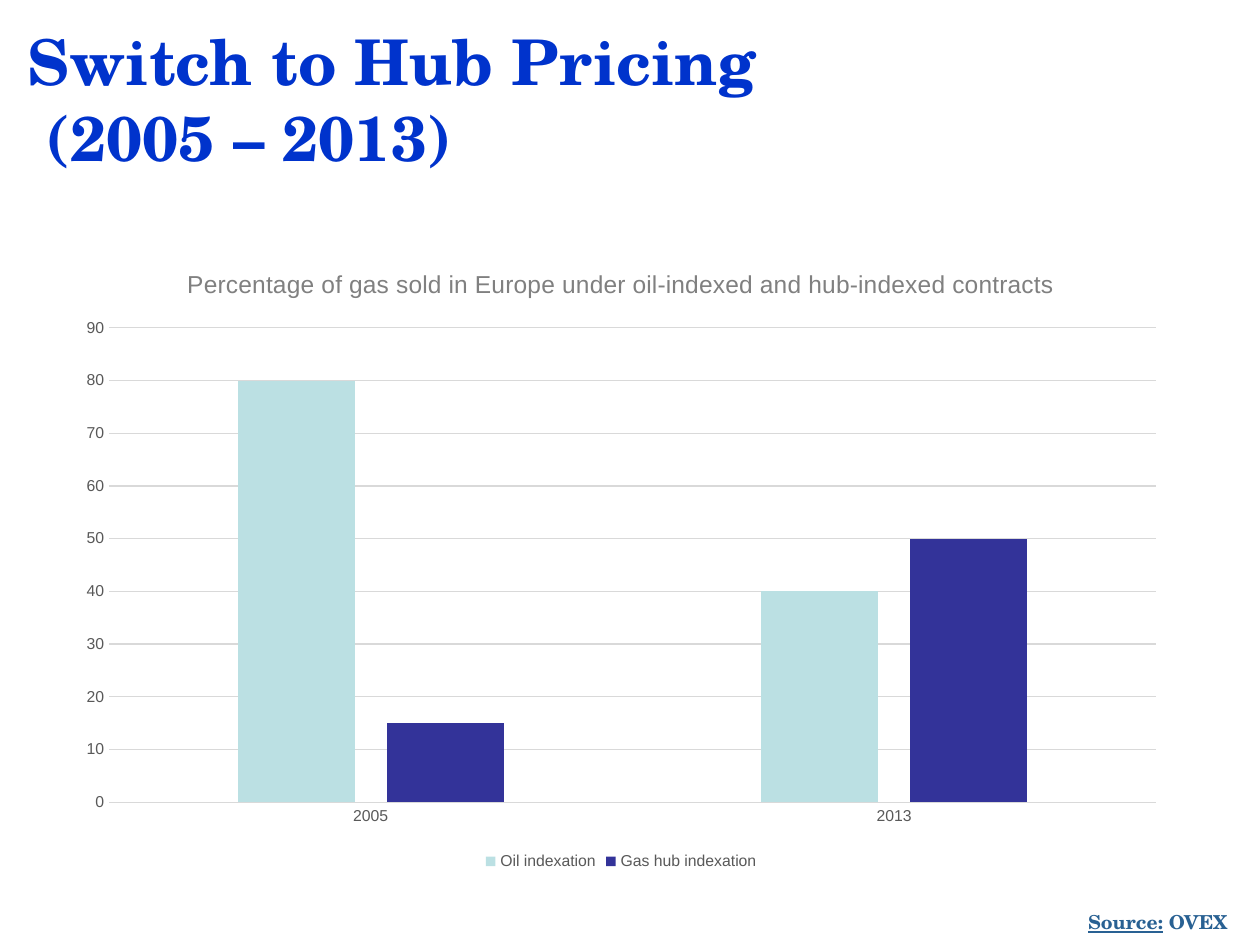
"""Build a slide comparing oil-indexed and hub-indexed gas sales in Europe."""
import pptx
import pptx.chart.data
import pptx.dml.color
import pptx.enum.chart
import pptx.enum.text
import pptx.util
from pptx.util import Inches, Pt

TITLE = ["Switch to Hub Pricing", " (2005 – 2013)"]
SOURCE = [("Source:", True), (" OVEX", False)]
CHART_TITLE = "Percentage of gas sold in Europe under oil-indexed and hub-indexed contracts"
YEARS = ["2005", "2013"]
SERIES = [("Oil indexation", (80, 40), "BBE0E3"), ("Gas hub indexation", (15, 50), "333399")]
SERIF, SANS = "TeX Gyre Schola", "Arial"
GREY, GRID = "595959", "D9D9D9"


def rgb(value):
    return pptx.dml.color.RGBColor.from_string(value)


def style(font, size, color, name=SANS, bold=False, underline=None):
    font.size, font.name, font.bold, font.underline = Pt(size), name, bold, underline
    font.color.rgb = rgb(color)


def add_run(p, text, **fmt):
    r = p.add_run()
    r.text = text
    style(r.font, **fmt)


def place(sp, left, top, width, height):
    sp.left, sp.top, sp.width, sp.height = map(Inches, (left, top, width, height))


def draw_line(line):
    line.color.rgb = rgb(GRID)
    line.width = Pt(0.75)


def add_title(s):
    sp = s.shapes.title
    place(sp, 0.12, 0.13, 8.19, 1.18)
    tf = sp.text_frame
    tf.word_wrap = True
    tf.auto_size = pptx.enum.text.MSO_AUTO_SIZE.NONE
    tf.vertical_anchor = pptx.enum.text.MSO_ANCHOR.TOP
    for i, text in enumerate(TITLE):
        p = tf.add_paragraph() if i else tf.paragraphs[0]
        p.alignment = pptx.enum.text.PP_ALIGN.LEFT
        p.space_before = Pt(0)
        add_run(p, text, size=36, color="0033CC", name=SERIF, bold=True)


def add_source(s):
    sp = s.shapes.add_textbox(Inches(6.89), Inches(7.22), Inches(2.95), Inches(0.2))
    tf = sp.text_frame
    tf.word_wrap = True
    tf.vertical_anchor = pptx.enum.text.MSO_ANCHOR.MIDDLE
    p = tf.paragraphs[0]
    p.alignment = pptx.enum.text.PP_ALIGN.RIGHT
    for text, underline in SOURCE:
        add_run(p, text, size=11, color="296193", name=SERIF, bold=True, underline=underline)


def add_chart(s):
    data = pptx.chart.data.CategoryChartData()
    data.categories = YEARS
    for name, values, _ in SERIES:
        data.add_series(name, values)
    chart = s.shapes.add_chart(
        pptx.enum.chart.XL_CHART_TYPE.COLUMN_CLUSTERED,
        Inches(0.51), Inches(1.94), Inches(8.84), Inches(5.01), data).chart
    style(chart.font, 10, "000000")
    chart.has_title = True
    add_run(chart.chart_title.text_frame.paragraphs[0], CHART_TITLE, size=14, color="808080")
    chart.chart_title.include_in_layout = False

    chart.has_legend = True
    chart.legend.position = pptx.enum.chart.XL_LEGEND_POSITION.BOTTOM
    chart.legend.include_in_layout = False
    style(chart.legend.font, 9, GREY)

    cat, val = chart.category_axis, chart.value_axis
    for axis in (cat, val):
        style(axis.tick_labels.font, 9, GREY)
        axis.major_tick_mark = axis.minor_tick_mark = pptx.enum.chart.XL_TICK_MARK.NONE
    draw_line(cat.format.line)
    val.format.line.fill.background()
    val.minimum_scale, val.maximum_scale, val.major_unit = 0, 90, 10
    val.has_major_gridlines = True
    draw_line(val.major_gridlines.format.line)

    plot = chart.plots[0]
    plot.gap_width, plot.overlap, plot.vary_by_categories = 219, -27, False
    for series, (_, _, color) in zip(plot.series, SERIES):
        series.format.fill.solid()
        series.format.fill.fore_color.rgb = rgb(color)


def main():
    prs = pptx.Presentation()
    prs.slide_width, prs.slide_height = Inches(10), Inches(7.5)
    s = prs.slides.add_slide(prs.slide_layouts[5])
    add_title(s)
    add_source(s)
    add_chart(s)
    prs.save("out.pptx")


if __name__ == "__main__":
    main()
